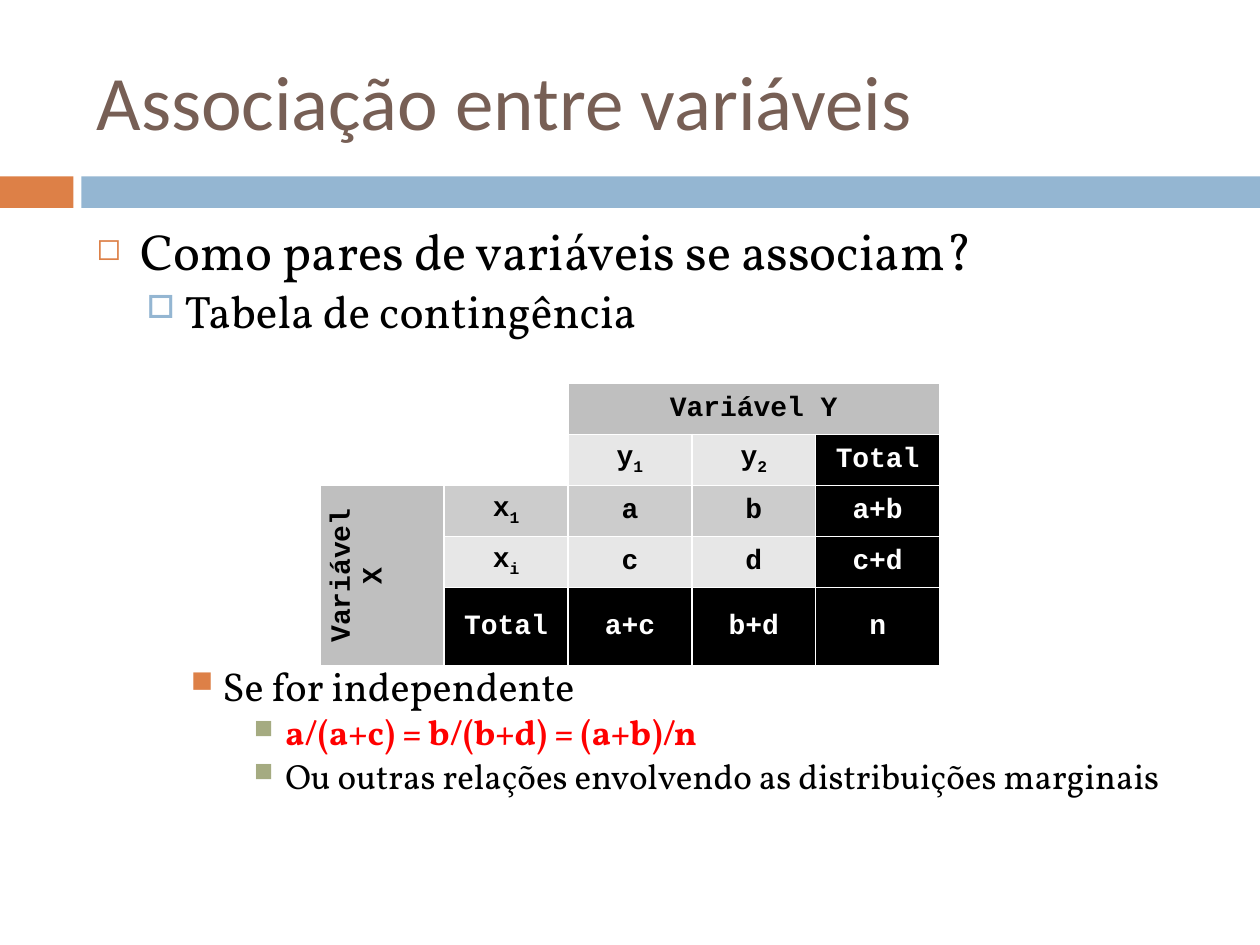
import pptx
import pptx.dml.color
import pptx.enum.shapes
import pptx.enum.text
import pptx.oxml
import pptx.oxml.ns
import pptx.util
from lxml import etree

Pt = pptx.util.Pt
ALIGN = pptx.enum.text.PP_ALIGN
MIDDLE = pptx.enum.text.MSO_ANCHOR.MIDDLE


def color(hex_string):
    return pptx.dml.color.RGBColor.from_string(hex_string)


def add_run(paragraph, text, font_color, **formats):
    run = paragraph.add_run()
    run.text = text
    run.font.color.rgb = color(font_color)
    for name, value in formats.items():
        setattr(run.font, name, value)
    return run


presentation = pptx.Presentation()
presentation.slide_width, presentation.slide_height = Pt(720), Pt(540)
slide = presentation.slides.add_slide(presentation.slide_layouts[5])

# Bars below the title
for left, width, fill in [(0, 42, "DD8047"), (46.5, 673.5, "94B6D2")]:
    bar = slide.shapes.add_shape(
        pptx.enum.shapes.MSO_SHAPE.RECTANGLE, Pt(left), Pt(100.8), Pt(width), Pt(18))
    bar.shadow.inherit = False
    bar.fill.solid()
    bar.fill.fore_color.rgb = color(fill)
    bar.line.fill.background()

# Title
title = slide.shapes.title
title_place = {"left": 48, "top": 18, "width": 642, "height": 78}
for name, value in title_place.items():
    setattr(title, name, Pt(value))
title.text_frame.vertical_anchor = MIDDLE
title_paragraph = title.text_frame.paragraphs[0]
title_paragraph.alignment = ALIGN.LEFT
add_run(title_paragraph, "Associação entre variáveis", "775F55", name="Calibri", size=Pt(44))

# Bulleted text; the third item leaves room for the table
# text, level, size, colour, bold, space before, indent, hanging, bullet, bullet colour, bullet %
items = [
    ("Como pares de variáveis se associam?", 0, 29, "000000", False, 5.6, 25.2, 25.2, "◻", "DD8047", 60),
    ("Tabela de contingência", 1, 26, "000000", False, 4.4, 50.4, 21.6, "□", "94B6D2", 70),
    ("Se for independente", 2, 23, "000000", False, 187.5, 72, 18, "■", "DD8047", 75),
    ("a/(a+c) = b/(b+d) = (a+b)/n", 3, 20, "FF0000", True, 3.2, 108, 18, "■", "A5AB81", 75),
    ("Ou outras relações envolvendo as distribuições marginais",
     3, 20, "000000", False, 3.2, 108, 18, "■", "A5AB81", 75),
]
body = slide.shapes.add_textbox(Pt(48), Pt(126), Pt(642), Pt(376.5)).text_frame
body.word_wrap = True
for index, item in enumerate(items):
    text, level, size, font_color, bold, before, indent, hanging, bullet, bullet_color, percent = item
    paragraph = body.paragraphs[0] if index == 0 else body.add_paragraph()
    paragraph_formats = {"level": level, "line_spacing": 0.9, "space_before": Pt(before)}
    for name, value in paragraph_formats.items():
        setattr(paragraph, name, value)
    add_run(paragraph, text, font_color, name="Vollkorn", size=Pt(size), bold=bold)
    properties = paragraph._p.get_or_add_pPr()
    properties.set("marL", str(Pt(indent)))
    properties.set("indent", str(-Pt(hanging)))
    bullet_xml = pptx.oxml.parse_xml(
        f'<a:pPr {pptx.oxml.ns.nsdecls("a")}><a:buClr><a:srgbClr val="{bullet_color}"/></a:buClr>'
        f'<a:buSzPct val="{percent * 1000}"/><a:buChar char="{bullet}"/></a:pPr>')
    properties.extend(list(bullet_xml))

# Contingency table; "_" starts a subscript
rows = [
    ["", "", "Variável Y", "", ""],
    ["", "", "y_1", "y_2", "Total"],
    ["Variável X", "x_1", "a", "b", "a+b"],
    ["", "x_i", "c", "d", "c+d"],
    ["", "Total", "a+c", "b+d", "n"],
]
row_fills = ["BFBFBF", "E7E7E7", "CCCCCC", "E7E7E7", "000000"]
table_frame = slide.shapes.add_table(5, 5, Pt(183), Pt(219), Pt(354), Pt(146))
table = table_frame.table
table.first_row = table.horz_banding = False
for column in table.columns:
    column.width = Pt(70.8)
for row in table.rows:
    row.height = Pt(29.2)
table.cell(0, 2).merge(table.cell(0, 4))
table.cell(2, 0).merge(table.cell(4, 0))

for row_index, row in enumerate(rows):
    for column_index, text in enumerate(row):
        cell = table.cell(row_index, column_index)
        cell.vertical_anchor = MIDDLE
        cell_properties = cell._tc.get_or_add_tcPr()
        for side in ("lnL", "lnR", "lnT", "lnB"):
            border = etree.SubElement(cell_properties, pptx.oxml.ns.qn(f"a:{side}"), w=str(Pt(1)))
            border_fill = etree.SubElement(border, pptx.oxml.ns.qn("a:solidFill"))
            etree.SubElement(border_fill, pptx.oxml.ns.qn("a:srgbClr"), val="FFFFFF")
        if not text:
            cell.fill.background()
            continue
        is_total = row_index == 4 or (column_index == 4 and row_index > 0)
        fill = "000000" if is_total else row_fills[row_index]
        if column_index == 0:
            fill = "BFBFBF"
            cell_properties.set("vert", "vert270")
        cell.fill.solid()
        cell.fill.fore_color.rgb = color(fill)
        paragraph = cell.text_frame.paragraphs[0]
        paragraph.alignment = ALIGN.CENTER
        for part_index, part in enumerate(text.split("_")):
            run = add_run(paragraph, part, "FFFFFF" if is_total else "000000",
                          name="Courier New", size=Pt(16), bold=True)
            if part_index == 1:
                run._r.get_or_add_rPr().set("baseline", "-25000")

presentation.save("out.pptx")
